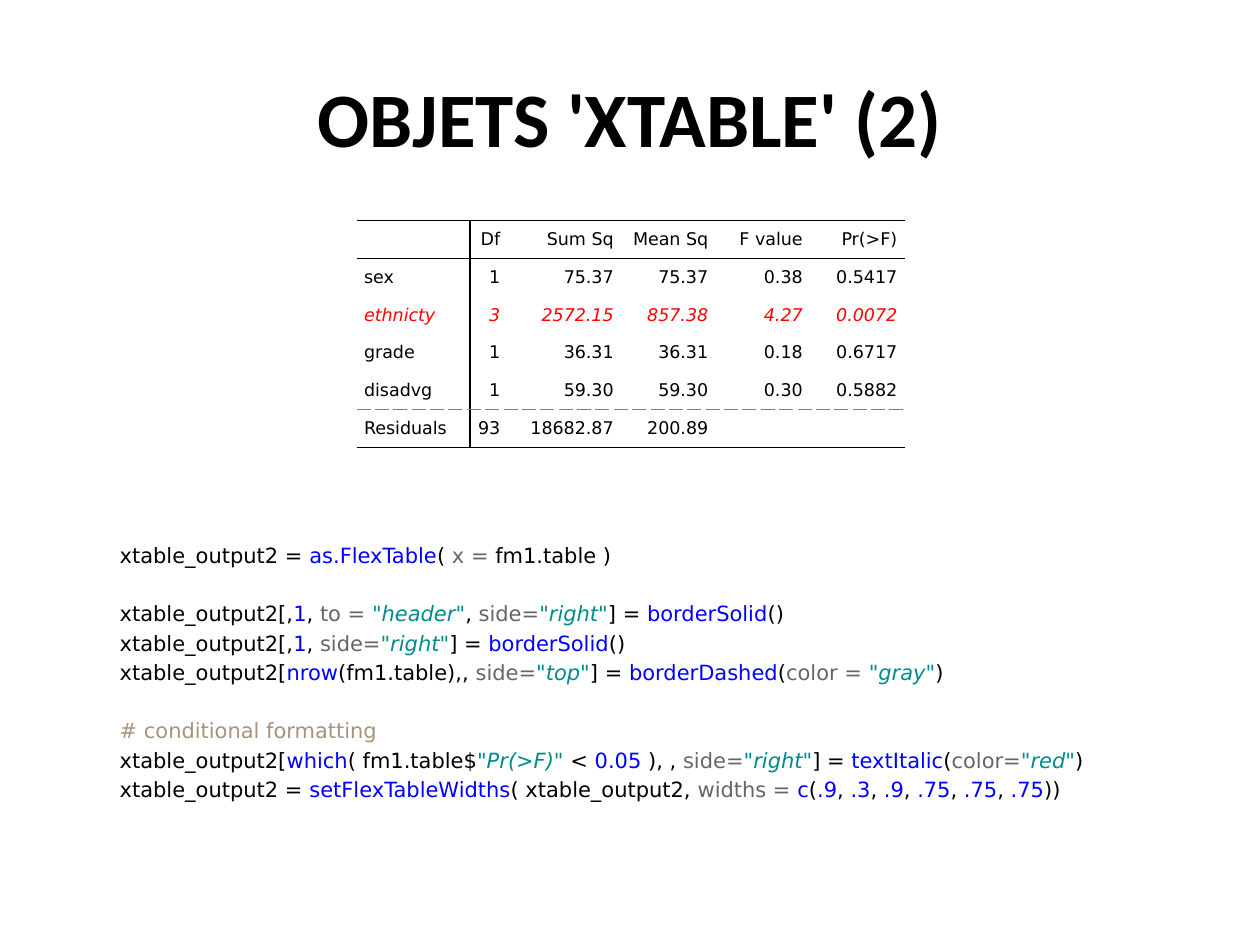
from lxml.etree import SubElement
from pptx import Presentation
from pptx.dml.color import RGBColor
from pptx.enum.text import MSO_ANCHOR as Anchor, PP_ALIGN as Align
from pptx.oxml.ns import qn
from pptx.util import Inches, Pt

BLACK, WHITE, RED, GRAY = "000000", "FFFFFF", "FF0000", "808080"
CODE_FONT = "DejaVu Sans"
PLAIN, CALL, ARGUMENT, STRING, COMMENT = BLACK, "0000FF", "666666", "008B8B", "A7947D"
COLUMN_WIDTHS = [0.9, 0.3, 0.9, 0.75, 0.75, 0.75]
ROW_HEIGHT = 0.3
SIGNIFICANT_ROW = 2
ANOVA = [
    ["", "Df", "Sum Sq", "Mean Sq", "F value", "Pr(>F)"],
    ["sex", "1", "75.37", "75.37", "0.38", "0.5417"],
    ["ethnicty", "3", "2572.15", "857.38", "4.27", "0.0072"],
    ["grade", "1", "36.31", "36.31", "0.18", "0.6717"],
    ["disadvg", "1", "59.30", "59.30", "0.30", "0.5882"],
    ["Residuals", "93", "18682.87", "200.89", "", ""],
]
SIDE_RIGHT = [("side=", ARGUMENT), ('"right"', STRING), ("] = ", PLAIN)]
FIRST_COLUMN = [("xtable_output2[,", PLAIN), ("1", CALL), (", ", PLAIN)]
BORDER_SOLID = [("borderSolid", CALL), ("()", PLAIN)]


def width_arguments():
    """Return the runs that list the column widths, separated by commas."""
    runs = []
    for width in COLUMN_WIDTHS:
        runs += [(f"{width}".lstrip("0"), CALL), (", ", PLAIN)]
    return runs[:-1]


CODE_BLOCKS = [
    [
        [("xtable_output2 = ", PLAIN), ("as.FlexTable", CALL), ("( ", PLAIN),
         ("x =", ARGUMENT), (" fm1.table )", PLAIN)],
    ],
    [
        FIRST_COLUMN + [("to = ", ARGUMENT), ('"header"', STRING), (", ", PLAIN)]
        + SIDE_RIGHT + BORDER_SOLID,
        FIRST_COLUMN + SIDE_RIGHT + BORDER_SOLID,
        [("xtable_output2[", PLAIN), ("nrow", CALL), ("(fm1.table),, ", PLAIN),
         ("side=", ARGUMENT), ('"top"', STRING), ("] = ", PLAIN),
         ("borderDashed", CALL), ("(", PLAIN), ("color = ", ARGUMENT),
         ('"gray"', STRING), (")", PLAIN)],
    ],
    [
        [("# conditional formatting", COMMENT)],
        [("xtable_output2[", PLAIN), ("which", CALL), ("( fm1.table$", PLAIN),
         ('"Pr(>F)"', STRING), (" < ", PLAIN), ("0.05", CALL), (" ), , ", PLAIN)]
        + SIDE_RIGHT
        + [("textItalic", CALL), ("(", PLAIN), ("color=", ARGUMENT),
           ('"red"', STRING), (")", PLAIN)],
        [("xtable_output2 = ", PLAIN), ("setFlexTableWidths", CALL),
         ("( xtable_output2, ", PLAIN), ("widths = ", ARGUMENT), ("c", CALL),
         ("(", PLAIN)] + width_arguments() + [("))", PLAIN)],
    ],
]


def color(value):
    """Turn a hex string into a colour."""
    return RGBColor.from_string(value)


def add_run(paragraph, text, size, font, fill, bold=False, italic=False):
    """Append one formatted run to a paragraph."""
    run = paragraph.add_run()
    run.text = text
    run.font.size, run.font.name = Pt(size), font
    run.font.bold, run.font.italic = bold, italic
    run.font.color.rgb = color(fill)


def add_text_frame(slide, left, top, width, height):
    """Add a wrapping text box and return its text frame."""
    box = slide.shapes.add_textbox(Inches(left), Inches(top), Inches(width), Inches(height))
    box.text_frame.word_wrap = True
    return box.text_frame


def add_title(slide, text):
    """Add the centred slide title."""
    frame = add_text_frame(slide, 0.5, 0.3, 9, 1.25)
    frame.vertical_anchor = Anchor.MIDDLE
    paragraph = frame.paragraphs[0]
    paragraph.alignment = Align.CENTER
    add_run(paragraph, text, 44, "Calibri", BLACK, bold=True)


def horizontal_rule(boundary):
    """Return the colour and dash of the rule above the given row, if any."""
    solid = (BLACK, "solid")
    return {0: solid, 1: solid, len(ANOVA) - 1: (GRAY, "sysDash"), len(ANOVA): solid}.get(boundary)


def set_borders(cell, row, column):
    """Draw the rules around a cell and clear its other borders."""
    divider = (BLACK, "solid")
    borders = {
        "a:lnL": divider if column == 1 else None,
        "a:lnR": divider if column == 0 else None,
        "a:lnT": horizontal_rule(row),
        "a:lnB": horizontal_rule(row + 1),
    }
    properties = cell._tc.get_or_add_tcPr()
    for tag, border in borders.items():
        line = SubElement(properties, qn(tag), w=str(Pt(1)))
        if border is None:
            SubElement(line, qn("a:noFill"))
            continue
        fill, dash = border
        SubElement(SubElement(line, qn("a:solidFill")), qn("a:srgbClr"), val=fill)
        SubElement(line, qn("a:prstDash"), val=dash)


def fill_cell(cell, row, column):
    """Write and format one cell of the variance table."""
    set_borders(cell, row, column)
    cell.fill.solid()
    cell.fill.fore_color.rgb = color(WHITE)
    cell.vertical_anchor = Anchor.MIDDLE
    cell.margin_left = cell.margin_right = Inches(0.06)
    cell.margin_top = cell.margin_bottom = 0
    paragraph = cell.text_frame.paragraphs[0]
    paragraph.alignment = Align.RIGHT if column else Align.LEFT
    paragraph.space_before = paragraph.space_after = Pt(1)
    text = ANOVA[row][column]
    if text:
        significant = row == SIGNIFICANT_ROW
        add_run(paragraph, text, 10, CODE_FONT, RED if significant else BLACK, italic=significant)
    else:
        SubElement(paragraph._p, qn("a:endParaRPr"), sz="1000")


def add_anova_table(slide):
    """Add the table of the analysis of variance."""
    table = slide.shapes.add_table(
        len(ANOVA), len(COLUMN_WIDTHS), Inches(2.83), Inches(1.75),
        Inches(sum(COLUMN_WIDTHS)), Inches(ROW_HEIGHT * len(ANOVA))).table
    table.first_row = table.horz_banding = False
    for column, width in zip(table.columns, COLUMN_WIDTHS):
        column.width = Inches(width)
    for row_index, row in enumerate(table.rows):
        row.height = Inches(ROW_HEIGHT)
        for column_index, cell in enumerate(row.cells):
            fill_cell(cell, row_index, column_index)


def add_code(slide):
    """Add the highlighted code, with a gap of one line between blocks."""
    frame = add_text_frame(slide, 0.84, 4.26, 8.32, 2.33)
    frame.margin_left = Inches(0.11)
    paragraph = frame.paragraphs[0]
    for block_index, block in enumerate(CODE_BLOCKS):
        for line_index, line in enumerate(block):
            if block_index or line_index:
                paragraph = frame.add_paragraph()
            starts_block = block_index and not line_index
            paragraph.space_before = Pt(17.6 if starts_block else 1.2)
            paragraph.space_after = Pt(1.2)
            for text, kind in line:
                add_run(paragraph, text, 12, CODE_FONT, kind, italic=kind == STRING)


def main():
    """Build and save the slide."""
    presentation = Presentation()
    presentation.slide_width, presentation.slide_height = Inches(10), Inches(7.5)
    slide = presentation.slides.add_slide(presentation.slide_layouts[6])
    add_title(slide, "OBJETS 'XTABLE' (2)")
    add_anova_table(slide)
    add_code(slide)
    presentation.save("out.pptx")


if __name__ == "__main__":
    main()
